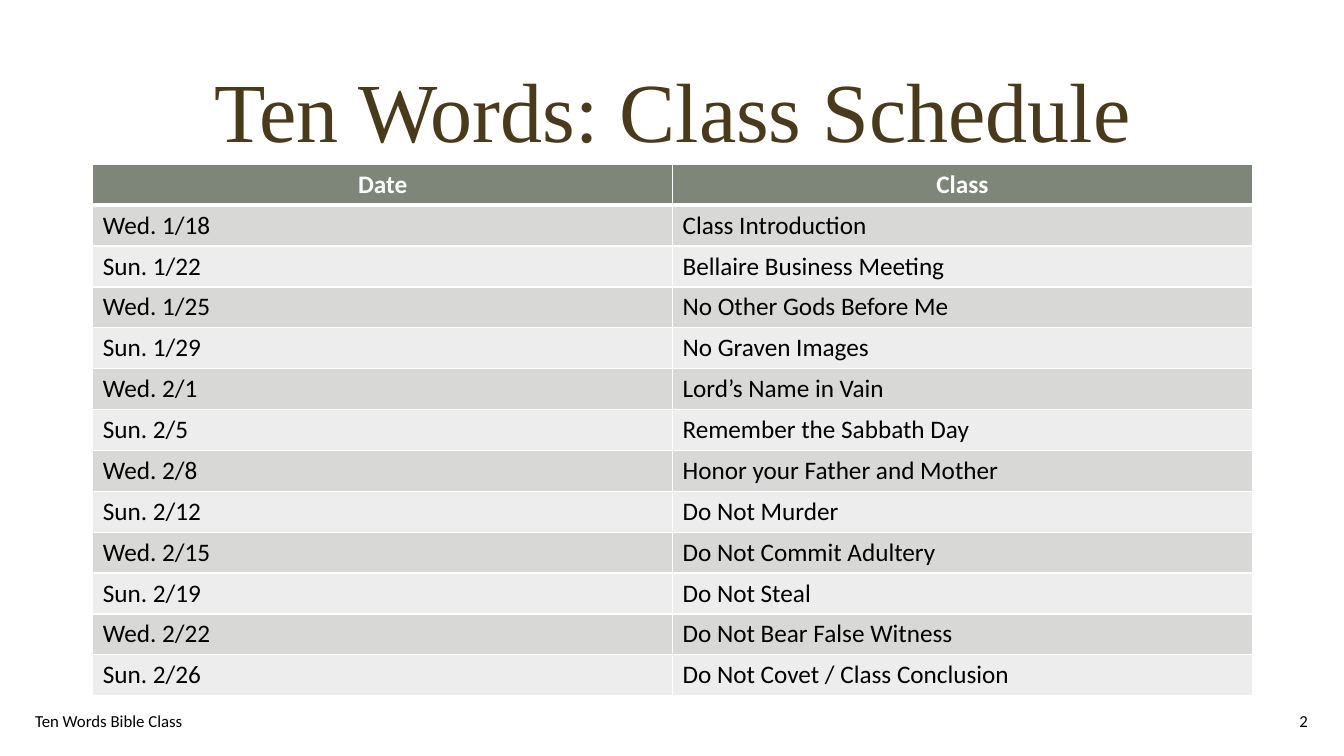
from dataclasses import dataclass

from lxml.etree import SubElement
from pptx import Presentation
from pptx.dml.color import RGBColor
from pptx.enum.text import MSO_ANCHOR, PP_ALIGN
from pptx.oxml.ns import qn
from pptx.util import Inches, Pt


@dataclass(frozen=True)
class Theme:
    title_font: str = "Times New Roman"
    body_font: str = "Calibri"
    title_size: int = 60
    table_size: int = 18
    footer_size: int = 12
    title_color: str = "4A3A1C"
    text_color: str = "000000"
    header_text: str = "FFFFFF"
    header_fill: str = "7E8679"
    odd_fill: str = "D8D9D7"
    even_fill: str = "ECEDEC"
    border_color: str = "FFFFFF"


THEME = Theme()

SCHEDULE = [
    ("Date", "Class"),
    ("Wed. 1/18", "Class Introduction"),
    ("Sun. 1/22", "Bellaire Business Meeting"),
    ("Wed. 1/25", "No Other Gods Before Me"),
    ("Sun. 1/29", "No Graven Images"),
    ("Wed. 2/1", "Lord’s Name in Vain"),
    ("Sun. 2/5", "Remember the Sabbath Day"),
    ("Wed. 2/8", "Honor your Father and Mother"),
    ("Sun. 2/12", "Do Not Murder"),
    ("Wed. 2/15", "Do Not Commit Adultery"),
    ("Sun. 2/19", "Do Not Steal"),
    ("Wed. 2/22", "Do Not Bear False Witness"),
    ("Sun. 2/26", "Do Not Covet / Class Conclusion"),
]


def write(tf, text, font, size, color, align=PP_ALIGN.LEFT, bold=False):
    p = tf.paragraphs[0]
    p.text = text
    p.alignment = align
    p.font.name = font
    p.font.size = Pt(size)
    p.font.bold = bold
    p.font.color.rgb = RGBColor.from_string(color)
    return p


def add_title(s, text):
    sp = s.shapes.title
    sp.left, sp.top = Inches(0.92), Inches(0.42)
    sp.width, sp.height = Inches(11.5), Inches(1.45)
    tf = sp.text_frame
    tf.word_wrap = True
    tf.vertical_anchor = MSO_ANCHOR.MIDDLE
    p = write(tf, text, THEME.title_font, THEME.title_size,
              THEME.title_color, PP_ALIGN.CENTER)
    p.line_spacing = 0.9


def set_borders(cell, bottom):
    tc_pr = cell._tc.get_or_add_tcPr()
    for side, width in (("L", 1), ("R", 1), ("T", 1), ("B", bottom)):
        ln = SubElement(tc_pr, qn(f"a:ln{side}"), w=str(Pt(width)))
        fill = SubElement(ln, qn("a:solidFill"))
        SubElement(fill, qn("a:srgbClr"), val=THEME.border_color)


def format_cell(cell, text, row):
    header = row == 0
    if header:
        fill = THEME.header_fill
    else:
        fill = THEME.odd_fill if row % 2 else THEME.even_fill
    set_borders(cell, bottom=3 if header else 1)
    cell.fill.solid()
    cell.fill.fore_color.rgb = RGBColor.from_string(fill)
    write(cell.text_frame, text, THEME.body_font, THEME.table_size,
          THEME.header_text if header else THEME.text_color,
          PP_ALIGN.CENTER if header else PP_ALIGN.LEFT, header)


def add_schedule(s, rows):
    row_height = Inches(0.4)
    table = s.shapes.add_table(
        len(rows), len(rows[0]), Inches(0.92), Inches(1.63),
        Inches(11.5), row_height * len(rows)).table
    for i, values in enumerate(rows):
        table.rows[i].height = row_height
        for j, text in enumerate(values):
            format_cell(table.cell(i, j), text, i)


def add_footer(s, text, left, width, align):
    sp = s.shapes.add_textbox(Inches(left), Inches(6.95),
                              Inches(width), Inches(0.4))
    tf = sp.text_frame
    tf.word_wrap = True
    tf.vertical_anchor = MSO_ANCHOR.MIDDLE
    write(tf, text, THEME.body_font, THEME.footer_size,
          THEME.text_color, align)


def main():
    prs = Presentation()
    prs.slide_width, prs.slide_height = Inches(13.33), Inches(7.5)
    s = prs.slides.add_slide(prs.slide_layouts.get_by_name("Title Only"))
    add_title(s, "Ten Words: Class Schedule")
    add_schedule(s, SCHEDULE)
    add_footer(s, "Ten Words Bible Class", 0.25, 4.5, PP_ALIGN.LEFT)
    add_footer(s, "2", 10.07, 3, PP_ALIGN.RIGHT)
    prs.save("out.pptx")


if __name__ == "__main__":
    main()
